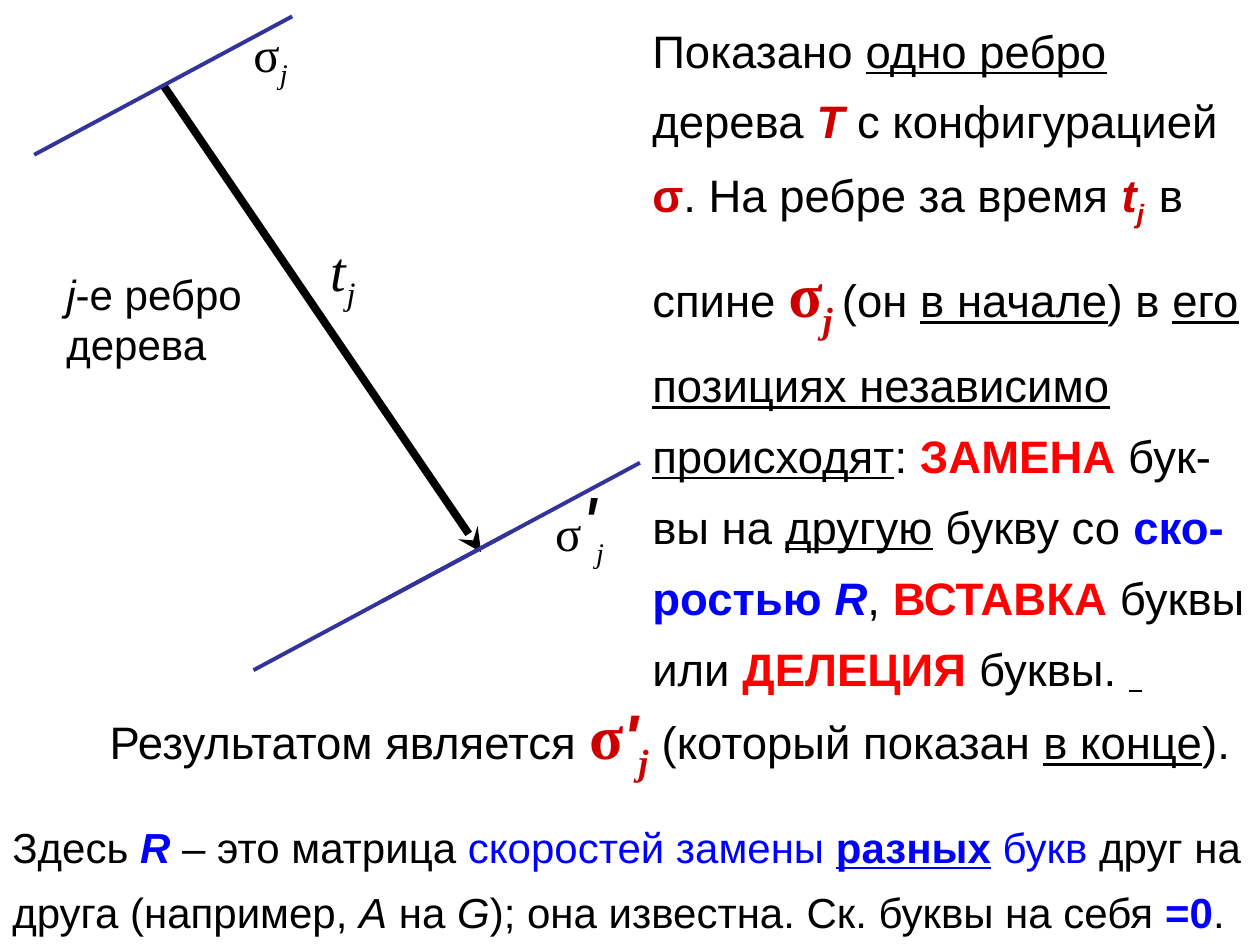
from lxml import etree
from pptx import Presentation
from pptx import util as u
from pptx.dml.color import RGBColor
from pptx.enum import shapes, text
from pptx.oxml.ns import qn

BLACK = RGBColor(0x00, 0x00, 0x00)
NAVY = RGBColor(0x33, 0x33, 0x99)
CRIMSON = RGBColor(0xCC, 0x00, 0x00)
RED = RGBColor(0xFF, 0x00, 0x00)
BLUE = RGBColor(0x00, 0x00, 0xFF)

SERIF = {"name": "Times New Roman"}
ITALIC = {"italic": True}
UNDER = {"underline": True}
SUB = {"subscript": True}
KEY = {"color": CRIMSON, "bold": True}
KEY_ITALIC = KEY | ITALIC
KEY_SERIF = KEY | SERIF | {"size": 36}
EVENT = {"color": RED, "bold": True}
BLUE_TEXT = {"color": BLUE}
RATE = BLUE_TEXT | {"bold": True}

CENTERED = {"vertical_anchor": text.MSO_ANCHOR.MIDDLE}
GROWING = {"auto_size": text.MSO_AUTO_SIZE.SHAPE_TO_FIT_TEXT}
SPIN_STEP = (5.2, -2.79)
SPIN_STARTS = [(0.69, 3.12), (7.7, 12.12), (5.11, 13.51)]

EDGE_STORY = [
    "Показано ", ("одно ребро", UNDER), " дерева ", ("Т ", KEY_ITALIC),
    "с конфигурацией ", ("σ", KEY), ". На ребре за время ",
    ("t", KEY_ITALIC), ("j  ", KEY_ITALIC | SUB), "в спине ",
    ("σ", KEY_SERIF), ("j ", KEY_SERIF | ITALIC | SUB),
    "(он ", ("в начале", UNDER), ") в ",
    ("его позициях независимо происходят", UNDER), ": ",
    ("ЗАМЕНА ", EVENT), "бук-вы на ", ("другую", UNDER), " букву со ",
    ("ско-ростью ", RATE), ("R", RATE | ITALIC), ", ", ("ВСТАВКА", EVENT),
    " буквы или ", ("ДЕЛЕЦИЯ", EVENT), " буквы. ", (" ", UNDER),
]
RESULT = [
    "Результатом является ", ("σ", KEY_SERIF),
    ("'", KEY_ITALIC | {"size": 36}), ("j", KEY_SERIF | ITALIC | SUB),
    ("  ", KEY_SERIF | ITALIC | SUB | {"size": 26}),
    "(который показан ", ("в конце", UNDER), ").",
]
MATRIX_NOTE = [
    "Здесь ", ("R", RATE | ITALIC), " – это матрица ",
    ("скоростей замены ", BLUE_TEXT), ("разных", RATE | UNDER),
    (" букв", BLUE_TEXT), " друг на друга (например, ", ("A", ITALIC),
    " на ", ("G", ITALIC), "); она известна. Ск. буквы на себя ",
    ("=0", RATE), ".",
]


def add_span(para, wording, style):
    span = para.add_run()
    span.text = wording
    values = {"name": "Arial", "color": BLACK} | style
    span.font.color.rgb = values.pop("color")
    if values.pop("subscript", False):
        span.font._element.set("baseline", "-25000")
    values["size"] = u.Pt(values["size"])
    for key, value in values.items():
        setattr(span.font, key, value)


def write(box, paragraphs, size, frame_format, para_format):
    """Fill a box; each piece is plain text or a (text, style) pair."""
    frame = box.text_frame
    defaults = {"word_wrap": True, "auto_size": text.MSO_AUTO_SIZE.NONE}
    for key, value in (defaults | frame_format).items():
        setattr(frame, key, value)
    for index, pieces in enumerate(paragraphs):
        para = frame.add_paragraph() if index else frame.paragraphs[0]
        for key, value in para_format.items():
            setattr(para, key, value)
        for piece in pieces:
            wording, style = (piece, {}) if isinstance(piece, str) else piece
            add_span(para, wording, {"size": size} | style)


def add_text(page, place, paragraphs, size, frame_format={}, para_format={}):
    box = page.shapes.add_textbox(*map(u.Cm, place))
    write(box, paragraphs, size, frame_format, para_format)


def set_title(page, place, pieces, size, para_format):
    title = page.shapes.title
    for key, value in zip(("left", "top", "width", "height"), place):
        setattr(title, key, u.Cm(value))
    write(title, [pieces], size, CENTERED, para_format)


def add_line(page, start, end, color, width, arrow=None):
    line = page.shapes.add_connector(
        shapes.MSO_CONNECTOR.STRAIGHT, *map(u.Cm, (*start, *end)))
    line.line.color.rgb = color
    line.line.width = u.Pt(width)
    if arrow:
        etree.SubElement(line.line._get_or_add_ln(), qn("a:tailEnd"), type=arrow)
    etree.SubElement(line._element.spPr, qn("a:effectLst"))


def main():
    deck = Presentation()
    deck.slide_width, deck.slide_height = u.Cm(25.4), u.Cm(19.05)
    page = deck.slides.add_slide(deck.slide_layouts[5])
    middle = {"alignment": text.PP_ALIGN.CENTER}
    spaced = {"line_spacing": 1.3}

    set_title(page, (4.06, 0.25, 2.79, 1.8),
              [("σ", SERIF), ("j", SERIF | ITALIC | SUB)], 28, middle)
    add_text(page, (10.29, 9.32, 2.79, 2.41),
             [[("σ", SERIF), ("'", ITALIC | {"size": 44}),
               ("j", SERIF | ITALIC | SUB)]], 28, CENTERED, middle)

    add_line(page, (3.3, 1.73), (9.7, 11.13), BLACK, 4.5, "stealth")
    for left, bottom in SPIN_STARTS:
        end = (left + SPIN_STEP[0], bottom + SPIN_STEP[1])
        add_line(page, (left, bottom), end, NAVY, 2.25)

    add_text(page, (12.9, 0, 12.5, 13.77), [EDGE_STORY], 26, para_format=spaced)
    add_text(page, (6.22, 4.62, 1.4, 1.8),
             [[("t", SERIF | ITALIC), ("j", SERIF | ITALIC | SUB)]],
             32, CENTERED, middle)
    add_text(page, (1.09, 5.28, 4.39, 2.31),
             [[("j", ITALIC), "-е ребро"], ["дерева"]], 24, GROWING)
    add_text(page, (0, 16.13, 25.4, 2.92), [MATRIX_NOTE], 24, GROWING, spaced)
    add_text(page, (1.96, 13.92, 23.39, 1.8), [RESULT], 26,
             GROWING | {"word_wrap": False})
    deck.save("out.pptx")


if __name__ == "__main__":
    main()
